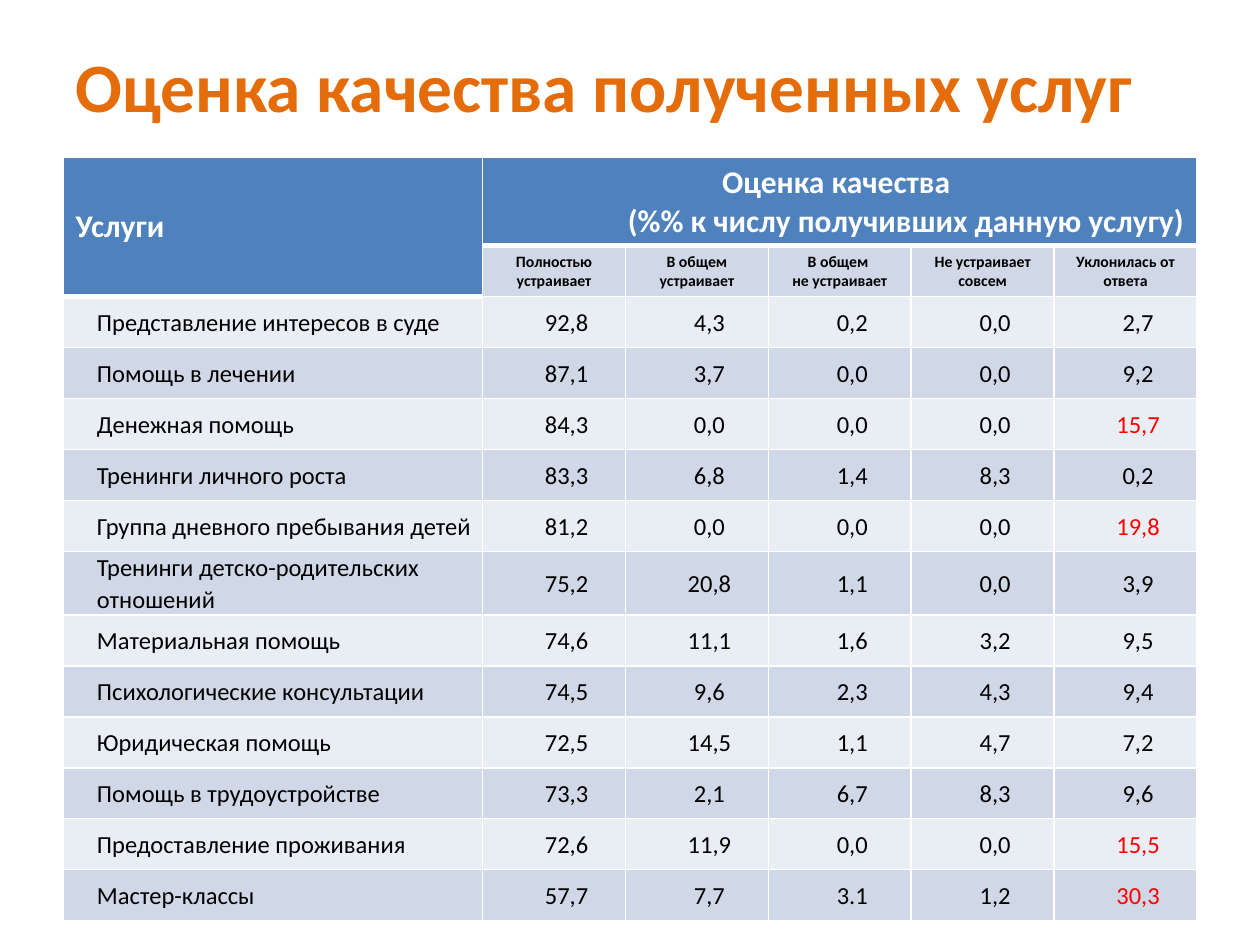
from lxml import etree
from pptx import Presentation
from pptx.dml.color import RGBColor
from pptx.enum.text import MSO_ANCHOR, PP_ALIGN
from pptx.oxml.ns import qn
from pptx.util import Inches, Pt

MIDDLE = MSO_ANCHOR.MIDDLE
LEFT, CENTER, RIGHT = PP_ALIGN.LEFT, PP_ALIGN.CENTER, PP_ALIGN.RIGHT

GRADES = [
    ["Полностью устраивает"],
    ["В общем устраивает"],
    ["В общем ", "не устраивает"],
    ["Не устраивает совсем"],
    ["Уклонилась от ответа"],
]
SERVICES = [
    ("Представление интересов в суде", "92,8 4,3 0,2 0,0 2,7"),
    ("Помощь в лечении", "87,1 3,7 0,0 0,0 9,2"),
    ("Денежная помощь", "84,3 0,0 0,0 0,0 15,7"),
    ("Тренинги личного роста", "83,3 6,8 1,4 8,3 0,2"),
    ("Группа дневного пребывания детей", "81,2 0,0 0,0 0,0 19,8"),
    ("Тренинги детско-родительских отношений", "75,2 20,8 1,1 0,0 3,9"),
    ("Материальная помощь", "74,6 11,1 1,6 3,2 9,5"),
    ("Психологические консультации", "74,5 9,6 2,3 4,3 9,4"),
    ("Юридическая помощь", "72,5 14,5 1,1 4,7 7,2"),
    ("Помощь в трудоустройстве", "73,3 2,1 6,7 8,3 9,6"),
    ("Предоставление проживания", "72,6 11,9 0,0 0,0 15,5"),
    ("Мастер-классы", "57,7 7,7 3.1 1,2 30,3"),
]
HIGH_REFUSAL = 15


def color(value):
    return RGBColor.from_string(value)


class SlideBuilder:
    font = "Calibri"
    orange, blue, white = "E46C0A", "4F81BD", "FFFFFF"
    black, red = "000000", "FF0000"
    bands = ["E9EDF4", "D0D8E8"]

    def __init__(self, deck):
        self.width, self.height = deck.slide_width, deck.slide_height
        self.page = deck.slides.add_slide(deck.slide_layouts[6])

    def area(self, left, top, width, height):
        return (int(self.width * left), int(self.height * top),
                int(self.width * width), int(self.height * height))

    def add_text(self, para, text, size, ink, bold=True, align=LEFT):
        para.alignment = align
        span = para.add_run()
        span.text = text
        span.font.name = self.font
        span.font.size = Pt(size)
        span.font.bold = bold
        span.font.color.rgb = color(ink)

    def title(self, text, area):
        box = self.page.shapes.add_textbox(*self.area(*area))
        frame = box.text_frame
        frame.word_wrap = True
        frame.vertical_anchor = MIDDLE
        self.add_text(frame.paragraphs[0], text, 39.6, self.orange)

    def table(self, rows, shares, area):
        left, top, width, height = self.area(*area)
        holder = self.page.shapes.add_table(rows, len(shares), left, top, width, height)
        grid = holder.table
        grid.first_row = grid.horz_banding = False
        for column, share in zip(grid.columns, shares):
            column.width = int(width * share)
        return grid

    def borders(self, cell, bottom):
        properties = cell._tc.get_or_add_tcPr()
        for side, points in (("L", 1), ("R", 1), ("T", 1), ("B", bottom)):
            line = etree.SubElement(properties, qn(f"a:ln{side}"), w=str(Pt(points)))
            fill = etree.SubElement(line, qn("a:solidFill"))
            etree.SubElement(fill, qn("a:srgbClr"), val=self.white)

    def cell(self, cell, lines, fill, size, ink, bold=True, aligns=(CENTER,), bottom=1):
        self.borders(cell, bottom)
        cell.fill.solid()
        cell.fill.fore_color.rgb = color(fill)
        cell.vertical_anchor = MIDDLE
        frame = cell.text_frame
        for index, line in enumerate(lines):
            para = frame.add_paragraph() if index else frame.paragraphs[0]
            self.add_text(para, line, size, ink, bold, aligns[min(index, len(aligns) - 1)])

    def header(self, cell, last, lines, aligns):
        cell.merge(last)
        self.cell(cell, lines, self.blue, 18, self.white, aligns=aligns, bottom=3)

    def tighten(self, cell):
        cell.margin_left = cell.margin_right = Inches(0.07)
        cell.margin_top = cell.margin_bottom = 0

    def grade(self, cell, lines):
        self.cell(cell, lines, self.bands[1], 9, self.black)
        self.tighten(cell)

    def entry(self, cell, text, band, ink, align):
        self.cell(cell, [text], self.bands[band], 14, ink, False, (align,))
        self.tighten(cell)
        para = cell.text_frame.paragraphs[0]
        para.line_spacing = Pt(18)
        indent = para._p.get_or_add_pPr()
        indent.set("marL", str(Inches(0.2)))
        indent.set("indent", "0")


def main():
    deck = Presentation()
    deck.slide_width, deck.slide_height = Inches(10), Inches(7.5)
    builder = SlideBuilder(deck)
    builder.title("Оценка качества полученных услуг", (0.05, 0.03, 0.9, 0.12))

    shares = [0.37] + [0.126] * len(GRADES)
    grid = builder.table(len(SERVICES) + 2, shares, (0.05, 1 / 6, 0.9, 0.756))
    builder.header(grid.cell(0, 0), grid.cell(1, 0), ["Услуги"], (LEFT,))
    builder.header(grid.cell(0, 1), grid.cell(0, len(GRADES)),
                   ["Оценка качества ", "(%% к числу получивших данную услугу)"],
                   (CENTER, RIGHT))
    for column, lines in enumerate(GRADES, 1):
        builder.grade(grid.cell(1, column), lines)

    for index, (service, figures) in enumerate(SERVICES):
        row, band = index + 2, index % 2
        builder.entry(grid.cell(row, 0), service, band, builder.black, LEFT)
        for column, figure in enumerate(figures.split(), 1):
            refused = column == len(GRADES) and float(figure.replace(",", ".")) > HIGH_REFUSAL
            ink = builder.red if refused else builder.black
            builder.entry(grid.cell(row, column), figure, band, ink, CENTER)

    deck.save("out.pptx")


if __name__ == "__main__":
    main()
